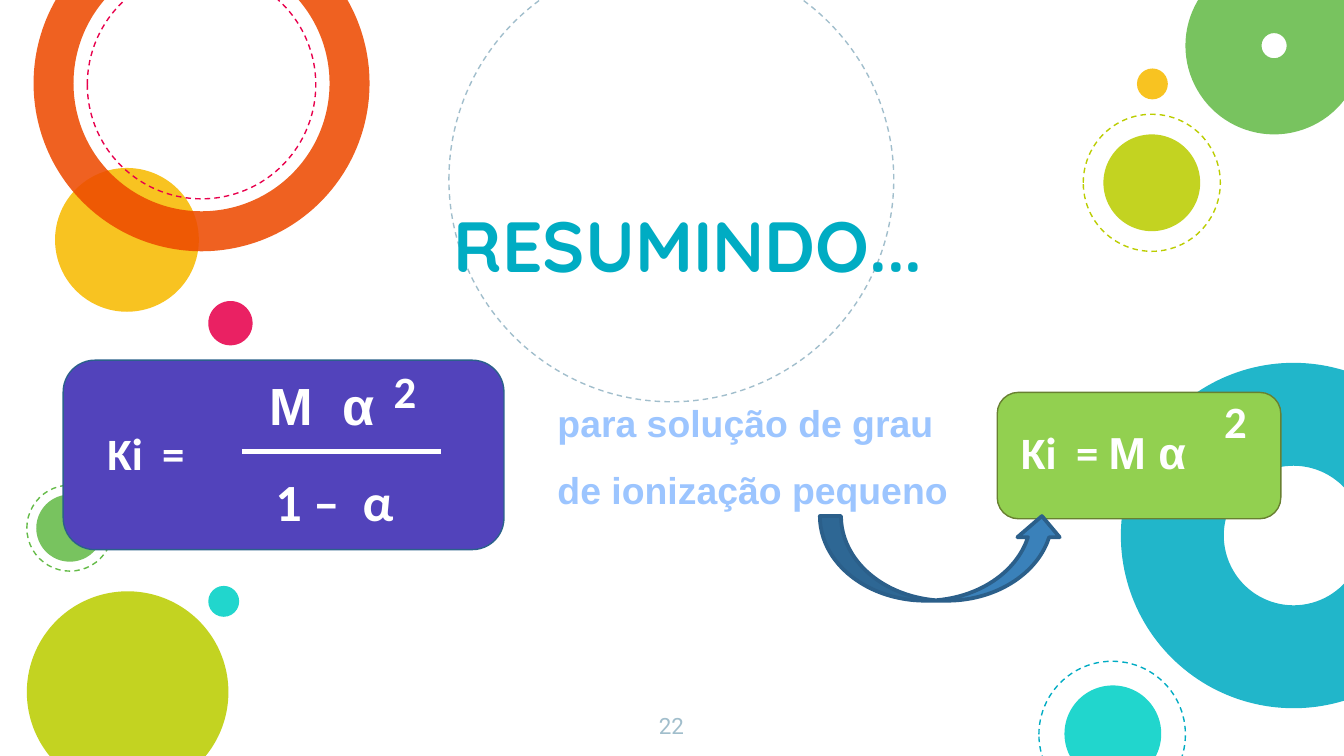
from dataclasses import dataclass

from lxml.etree import SubElement
from pptx import Presentation
from pptx.dml.color import RGBColor
from pptx.enum.dml import MSO_LINE
from pptx.enum.shapes import MSO_CONNECTOR, MSO_SHAPE
from pptx.enum.text import MSO_ANCHOR, PP_ALIGN
from pptx.oxml.ns import qn
from pptx.slide import Slide
from pptx.util import Inches, Pt

TEAL, AQUA, YELLOW, ORANGE = "00ACC3", "00D1C6", "F8BB00", "ED4A00"
LIME, GREEN, PINK, GREY = "BBCD00", "65BB48", "E8004C", "A1BECC"
WHITE = "FFFFFF"


def color(value):
    return RGBColor.from_string(value)


@dataclass
class Page:
    slide: Slide
    opacity: int = 87
    formula_font: str = "Calibri"

    def shape(self, kind, box, fill=None, line=None, width=0.75, adjust=None):
        item = self.slide.shapes.add_shape(kind, *map(Inches, box))
        item.shadow.inherit = False
        if adjust is not None:
            item.adjustments[0] = adjust
        if fill:
            item.fill.solid()
            item.fill.fore_color.rgb = color(fill)
        else:
            item.fill.background()
        if line:
            item.line.color.rgb = color(line)
            item.line.width = Pt(width)
        else:
            item.line.fill.background()
        return item

    def disc(self, left, top, size, fill, hole=None):
        kind = MSO_SHAPE.OVAL if hole is None else MSO_SHAPE.DONUT
        disc = self.shape(kind, (left, top, size, size), fill, adjust=hole)
        tint = disc.fill._xPr.find(qn("a:solidFill"))[0]
        SubElement(tint, qn("a:alpha")).set("val", str(self.opacity * 1000))

    def ring(self, left, top, size, line):
        ring = self.shape(MSO_SHAPE.OVAL, (left, top, size, size), line=line)
        ring.line.dash_style = MSO_LINE.DASH

    def style(self, paragraph, size, font, ink, bold):
        paragraph.font.size = Pt(size)
        paragraph.font.name = font
        paragraph.font.bold = bold
        paragraph.font.color.rgb = color(ink)

    def title(self, box, text):
        title = self.slide.shapes.title
        title.left, title.top, title.width, title.height = map(Inches, box)
        frame = title.text_frame
        frame.text = text
        frame.vertical_anchor = MSO_ANCHOR.BOTTOM
        frame.margin_top = frame.margin_bottom = Inches(0.1)
        heading = frame.paragraphs[0]
        heading.alignment = PP_ALIGN.CENTER
        self.style(heading, 38, "Quicksand", TEAL, True)
        self.slide.shapes._spTree.append(title._element)

    def text(self, box, lines, size, font=None, ink=WHITE, bold=True,
             align=PP_ALIGN.LEFT, spacing=None, inset=0.05):
        frame = self.slide.shapes.add_textbox(*map(Inches, box)).text_frame
        frame.word_wrap = True
        frame.margin_top = frame.margin_bottom = Inches(inset)
        frame.text = "\n".join(lines)
        for paragraph in frame.paragraphs:
            paragraph.alignment = align
            paragraph.line_spacing = spacing
            self.style(paragraph, size, font or self.formula_font, ink, bold)
        return frame

    def formula(self, box, pieces, size, font=None):
        paragraph = self.text(box, [""], size, font).paragraphs[0]
        for text, gap in pieces:
            run = paragraph.add_run()
            run.text = text
            if gap:
                run._r.get_or_add_rPr().set("spc", str(gap * 100))
        return paragraph

    def bar(self, left, right, y, line, width):
        bar = self.slide.shapes.add_connector(
            MSO_CONNECTOR.STRAIGHT, Inches(left), Inches(y), Inches(right), Inches(y))
        bar.line.color.rgb = color(line)
        bar.line.width = Pt(width)
        SubElement(bar._element.spPr, qn("a:effectLst"))


def main():
    deck = Presentation()
    deck.slide_width = Inches(10)
    deck.slide_height = deck.slide_width * 9 // 16
    page = Page(deck.slides.add_slide(deck.slide_layouts[5]))

    page.ring(3.34, -0.32, 3.31, GREY)
    for disc in (
        (1.55, 4.36, 0.23, AQUA),
        (8.34, 2.7, 2.57, TEAL, 0.298),
        (0.41, 1.25, 1.07, YELLOW),
        (7.92, 5.1, 0.72, AQUA),
        (0.25, -0.63, 2.5, ORANGE, 0.119),
        (8.21, 1, 0.72, LIME),
        (8.82, -0.32, 1.32, GREEN, 0.429),
        (1.55, 2.24, 0.33, PINK),
        (0.2, 4.4, 1.5, LIME),
        (0.27, 3.68, 0.5, GREEN),
        (8.46, 0.51, 0.23, YELLOW),
    ):
        page.disc(*disc)
    for ring in (
        (7.73, 4.92, 1.09, TEAL),
        (8.06, 0.85, 1.02, LIME),
        (0.2, 3.61, 0.64, GREEN),
        (0.65, -0.22, 1.7, PINK),
    ):
        page.ring(*ring)

    page.title((0.75, 0.05, 8.74, 2.18), "RESUMINDO...")
    page.text((4.74, 5.2, 0.51, 0.43), ["22"], 12, "Roboto", GREY, False,
              PP_ALIGN.CENTER, inset=0.1)

    page.shape(MSO_SHAPE.ROUNDED_RECTANGLE, (7.42, 2.92, 2.11, 0.94),
               "92D050", "688031", adjust=0.167)
    page.shape(MSO_SHAPE.ROUNDED_RECTANGLE, (0.47, 2.68, 3.28, 1.41),
               "5243BB", "2B618B", adjust=0.167)

    page.formula((0.7, 3.12, 1.02, 0.51), [("Ki", 0), (" ", 5), ("=", 0)], 24)
    page.bar(1.8, 3.28, 3.36, WHITE, 3)
    page.formula((1.91, 2.73, 1.1, 0.57), [("M", 0), (" ", 8), ("α", 0)], 28, "Arial")
    page.formula((1.95, 3.44, 1.2, 0.57), [("1 –", 0), (" ", 6), ("α", 0)], 28)

    page.text((4.05, 2.76, 3.3, 1.11),
              ["para solução de grau", "de ionização pequeno"],
              20, "Arial", "9CC5FF", spacing=1.5)

    approximation = page.formula(
        (7.5, 3.11, 1.72, 0.51),
        [("Ki", 0), (" ", 5), ("= ", 0), ("M α", 0)], 24)
    approximation.runs[-1].font.name = "Arial"
    for left, top in ((2.83, 2.66), (9.01, 2.88)):
        page.text((left, top, 0.37, 0.51), ["2"], 24)

    page.shape(MSO_SHAPE.CURVED_UP_ARROW, (6.1, 3.84, 1.81, 0.63),
               "3A81BA", "2B5F8A", 2)
    deck.save("out.pptx")


if __name__ == "__main__":
    main()
